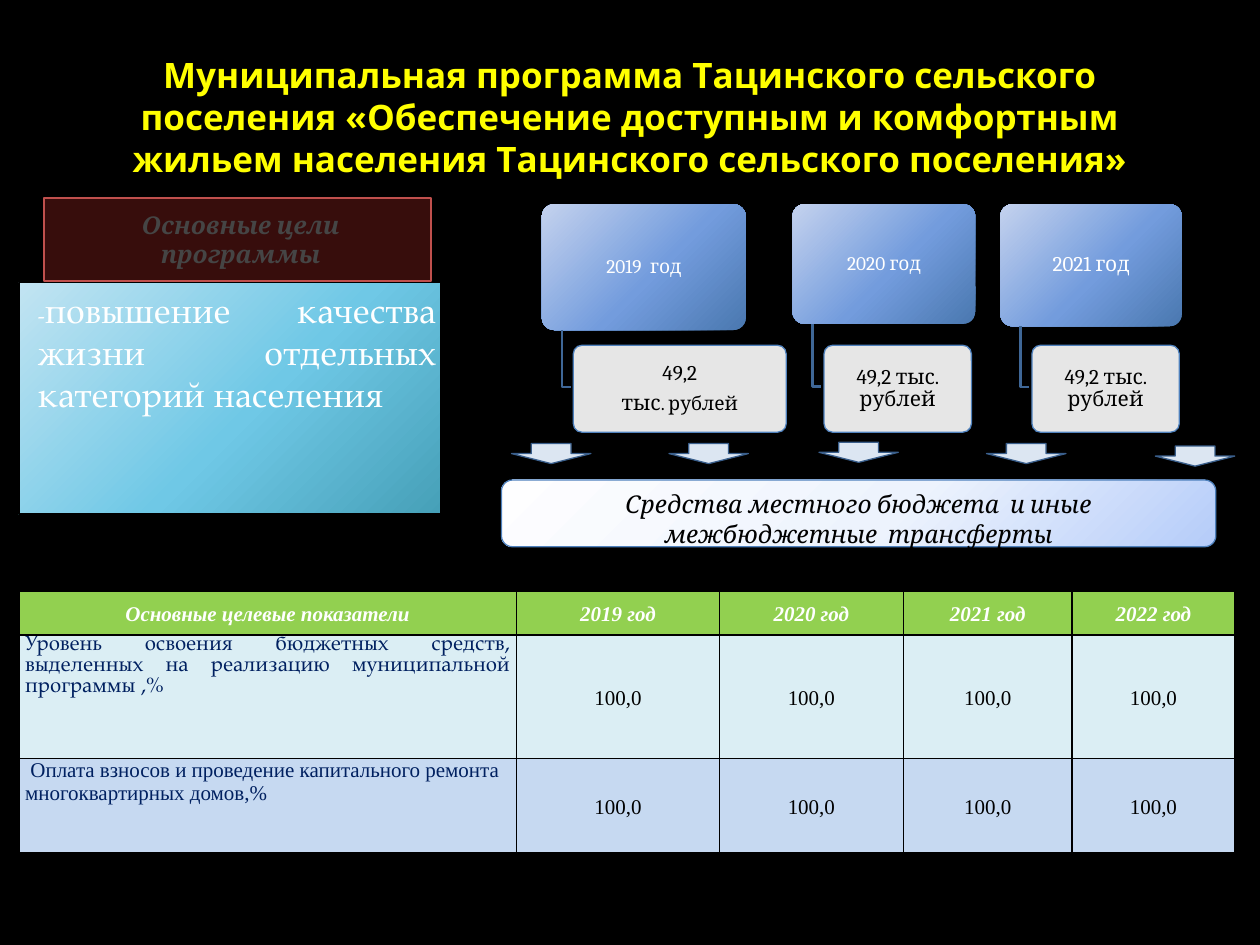
from lxml import etree
from pptx import Presentation
from pptx.dml.color import RGBColor
from pptx.enum.shapes import MSO_SHAPE
from pptx.enum.text import MSO_ANCHOR, PP_ALIGN
from pptx.oxml import parse_xml
from pptx.oxml.ns import nsdecls, qn
from pptx.util import Inches, Pt

RECT, ROUND, ARROW = MSO_SHAPE.RECTANGLE, MSO_SHAPE.ROUNDED_RECTANGLE, MSO_SHAPE.DOWN_ARROW
LEFT, CENTER, JUSTIFY = PP_ALIGN.LEFT, PP_ALIGN.CENTER, PP_ALIGN.JUSTIFY
TOP, MIDDLE = MSO_ANCHOR.TOP, MSO_ANCHOR.MIDDLE
SANS, SERIF, BOOK, TIMES = "Open Sans", "Cambria", "TeX Gyre Pagella", "Times New Roman"
COLS, ROWS = 100, 75
WIDTH, HEIGHT = Inches(10), Inches(7.5)
C = {
    "black": "000000", "white": "FFFFFF", "title": "FFFF00", "goal": "DD3530",
    "goal_line": "C0504D", "goal_text": "454545", "elbow": "3F6797", "line": "4F81BD",
    "arrow": "DCE6F2", "arrow_line": "3A5F8C", "header": "92D050", "navy": "002060",
    "row1": "DBEEF4", "row2": "C6D9F1",
}
GRADIENTS = {
    "goal": ("C2E4F2", "6FC8E6", "46A0B8"),
    "year": ("C4D2EE", "739CDD", "4A78B0"),
    "funds": ("FEFEFF", "EDF3FD", "B5CCF9"),
}


def x(col):
    """Turn grid columns into a horizontal length."""
    return round(WIDTH * col / COLS)


def y(row):
    """Turn grid rows into a vertical length."""
    return round(HEIGHT * row / ROWS)


def place(box):
    """Turn a grid box into left, top, width and height."""
    left, top, width, height = box
    return x(left), y(top), x(width), y(height)


def write(tf, paras, color, align=CENTER, anchor=MIDDLE, inset=(0.1, 0.05, 0.1, 0.05),
          font=SERIF, bold=False, italic=False, spacing=1.0, before=0, after=0, indent=0):
    """Fill a text frame with paragraphs, each a list of (text, size) runs."""
    tf.word_wrap = True
    tf.vertical_anchor = anchor
    tf.margin_left, tf.margin_top, tf.margin_right, tf.margin_bottom = map(Inches, inset)
    for i, runs in enumerate(paras):
        p = tf.add_paragraph() if i else tf.paragraphs[0]
        p.alignment, p.line_spacing = align, spacing
        p.space_before, p.space_after = Pt(before), Pt(after)
        p._p.get_or_add_pPr().set("marL", str(Inches(indent)))
        for text, size in runs:
            r = p.add_run()
            r.text = text
            r.font.name, r.font.size = font, Pt(size)
            r.font.bold, r.font.italic = bold, italic
            r.font.color.rgb = RGBColor.from_string(color)


def add_box(s, kind, box, fill=None, line=None, weight=0.75, gradient=None, alpha=None):
    """Add a preset shape with a solid or radial fill."""
    sp = s.shapes.add_shape(kind, *place(box))
    sp.shadow.inherit = False
    if gradient:
        sp.fill.gradient()
        stops = "".join(f'<a:gs pos="{pos}000"><a:srgbClr val="{color}"/></a:gs>'
                        for pos, color in zip((0, 55, 100), GRADIENTS[gradient]))
        grad = parse_xml(f'<a:gradFill {nsdecls("a")} rotWithShape="1"><a:gsLst>{stops}</a:gsLst>'
                         '<a:path path="circle"><a:fillToRect l="-40000" t="-90000" '
                         'r="140000" b="190000"/></a:path></a:gradFill>')
        spPr = sp._element.spPr
        spPr.replace(spPr.find(qn("a:gradFill")), grad)
    else:
        sp.fill.solid()
        sp.fill.fore_color.rgb = RGBColor.from_string(fill)
    if alpha:
        color = sp._element.spPr.find(qn("a:solidFill"))[0]
        etree.SubElement(color, qn("a:alpha")).set("val", f"{alpha}000")
    if line:
        sp.line.color.rgb = RGBColor.from_string(line)
        sp.line.width = Pt(weight)
    else:
        sp.line.fill.background()
    return sp


def add_title(s, box):
    """Write the slide title."""
    sp = s.shapes.add_textbox(*place(box))
    write(sp.text_frame, [[("Муниципальная программа Тацинского сельского поселения "
                            "«Обеспечение доступным и комфортным жильем населения "
                            "Тацинского сельского поселения»", 20)]],
          C["title"], font=SANS, bold=True)


def add_goals(s, box):
    """Place the goal heading above the goal panel."""
    left, top, width, height = box
    head = 6.7
    sp = add_box(s, RECT, (left + 2, top, width - 2.8, head - 0.1), C["goal"],
                 C["goal_line"], 1, alpha=25)
    write(sp.text_frame, [[("Основные цели программы", 14)]], C["goal_text"],
          bold=True, italic=True, before=3, indent=0.05)
    sp = add_box(s, RECT, (left, top + head, width, height - head), line=C["black"],
                 gradient="goal")
    write(sp.text_frame, [[("-", 12), ("повышение качества жизни отдельных категорий населения", 20)]],
          C["white"], JUSTIFY, TOP, (0, 0.05, 0.04, 0.05), BOOK, before=4, indent=0.15)


def add_year(s, box, head, year, size, amount, amount_width):
    """Place a year card with its amount hanging on an elbow line."""
    left, top, width, height = box
    amount_height, amount_left = 6.9, left + 2.5
    amount_top = top + height - amount_height
    sp = add_box(s, ROUND, (left, top, width, head), gradient="year")
    sp.adjustments[0] = 0.1
    write(sp.text_frame, [[(year, size)]], C["white"], inset=(0.02,) * 4, spacing=0.9)
    stem, bend = x(left + 1.6), y(amount_top + 3.3)
    path = s.shapes.build_freeform(stem, y(top + head))
    path.add_line_segments([(stem, bend), (x(amount_left - 0.2), bend)], close=False)
    elbow = path.convert_to_shape()
    elbow.shadow.inherit = False
    elbow.fill.background()
    elbow.line.color.rgb = RGBColor.from_string(C["elbow"])
    elbow.line.width = Pt(1.5)
    sp = add_box(s, ROUND, (amount_left, amount_top, amount_width, amount_height),
                 C["white"], C["line"], alpha=90)
    sp.adjustments[0] = 0.1
    write(sp.text_frame, amount, C["black"], inset=(0.03, 0.02, 0.03, 0.02),
          spacing=0.9, after=4.2)


def add_funding(s, box):
    """Place the three years, the funding bar and the arrows pointing at it."""
    left, top, width, height = box
    short = [[("49,2 тыс. рублей", 12)]]
    long = [[("49,2", 12)], [("тыс", 12), (". рублей", 11)]]
    years = [(3.2, 16.2, 10, "2019  год", 11, long, 16.9),
             (23.1, 14.5, 9.5, "2020 год", 11, short, 11.7),
             (39.6, 14.4, 9.7, "2021 год", 12, short, 11.7)]
    for offset, card, head, year, size, amount, amount_width in years:
        add_year(s, (left + offset, top, card, 18.1), head, year, size, amount, amount_width)
    bar = 5.3
    sp = add_box(s, ROUND, (left, top + height - bar, width, bar), line=C["line"],
                 gradient="funds")
    write(sp.text_frame, [[("Средства местного бюджета  и иные межбюджетные  трансферты", 14)]],
          C["black"], anchor=TOP, italic=True)
    for offset, drop in ((0.8, 19), (13.3, 19), (25.2, 18.9), (38.5, 19), (51.9, 19.2)):
        add_box(s, ARROW, (left + offset, top + drop, 6.3, 1.6), C["arrow"], C["arrow_line"])


def add_borders(cell):
    """Draw a thin black line on every side of a cell."""
    tcPr = cell._tc.get_or_add_tcPr()
    for i, side in enumerate(("lnL", "lnR", "lnT", "lnB")):
        tcPr.insert(i, parse_xml(f'<a:{side} {nsdecls("a")} w="12700"><a:solidFill>'
                                 f'<a:srgbClr val="{C["black"]}"/></a:solidFill></a:{side}>'))


def add_targets(s, box):
    """Place the table of target indicators."""
    widths, heights = (39.5, 16.1, 14.6, 13.4, 12.9), (3.4, 9.8, 7.5)
    rows = [["Основные целевые показатели"] + [f"{n} год" for n in range(2019, 2023)],
            ["Уровень освоения бюджетных средств, выделенных на реализацию "
             "муниципальной программы ,%"] + ["100,0"] * 4,
            [" Оплата взносов и проведение капитального ремонта "
             "многоквартирных домов,%"] + ["100,0"] * 4]
    labels = {1: (JUSTIFY, BOOK), 2: (LEFT, TIMES)}
    table = s.shapes.add_table(len(rows), len(widths), *place(box)).table
    for column, width in zip(table.columns, widths):
        column.width = x(width)
    for i, (texts, height, fill) in enumerate(zip(rows, heights, ("header", "row1", "row2"))):
        table.rows[i].height = y(height)
        for j, text in enumerate(texts):
            cell = table.cell(i, j)
            cell.fill.solid()
            cell.fill.fore_color.rgb = RGBColor.from_string(C[fill])
            add_borders(cell)
            paras = [[(text, 12)]]
            if i and not j:
                align, font = labels[i]
                write(cell.text_frame, paras, C["navy"], align, font=font)
                margins, cell.vertical_anchor = (0.05, 0), TOP
            else:
                write(cell.text_frame, paras, C["black" if i else "white"], font=TIMES,
                      bold=not i, italic=not i, spacing=1.15)
                margins, cell.vertical_anchor = (0.04, 0.06), MIDDLE
            cell.margin_left = cell.margin_right = Inches(margins[0])
            cell.margin_top = cell.margin_bottom = Inches(margins[1])


def main():
    """Build the slide and save it."""
    prs = Presentation()
    prs.slide_width, prs.slide_height = WIDTH, HEIGHT
    s = prs.slides.add_slide(prs.slide_layouts[6])
    s.background.fill.solid()
    s.background.fill.fore_color.rgb = RGBColor.from_string(C["black"])
    add_title(s, (5, 3, 90, 12.5))
    add_goals(s, (1.5, 15.7, 33.5, 25.1))
    add_targets(s, (1.5, 46.9, 96.5, 20.7))
    add_funding(s, (39.8, 16.2, 56.7, 27.2))
    prs.save("out.pptx")


if __name__ == "__main__":
    main()
